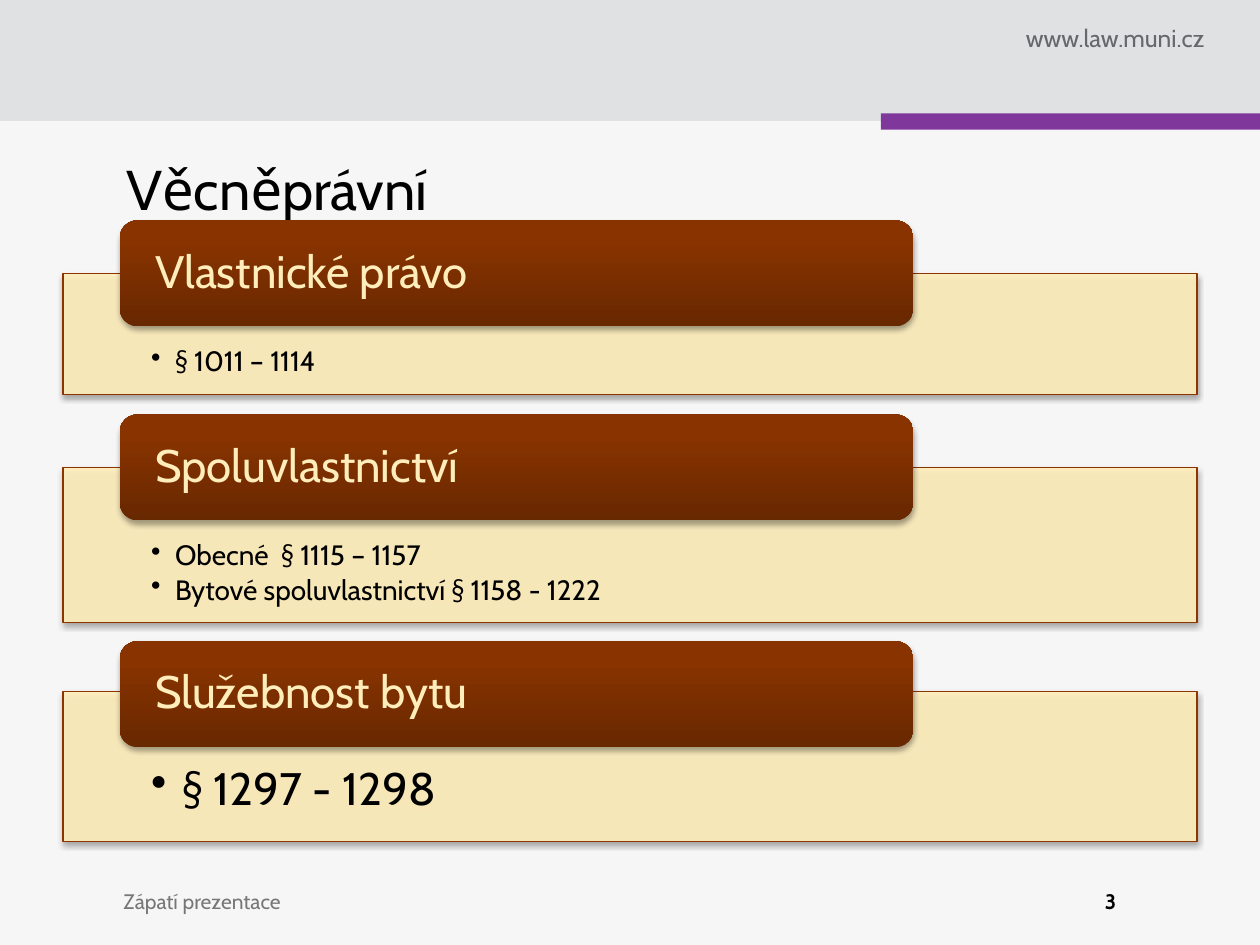
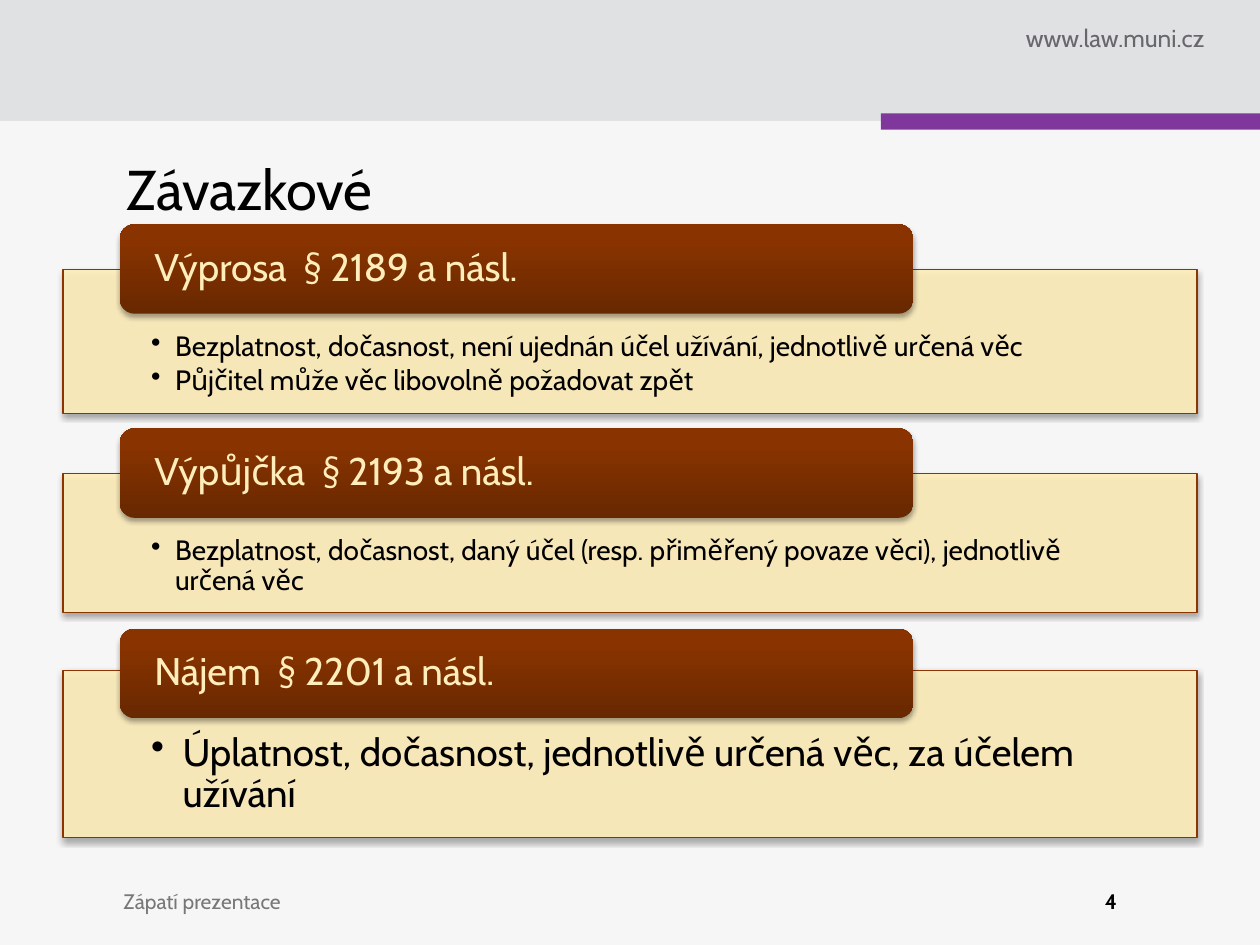
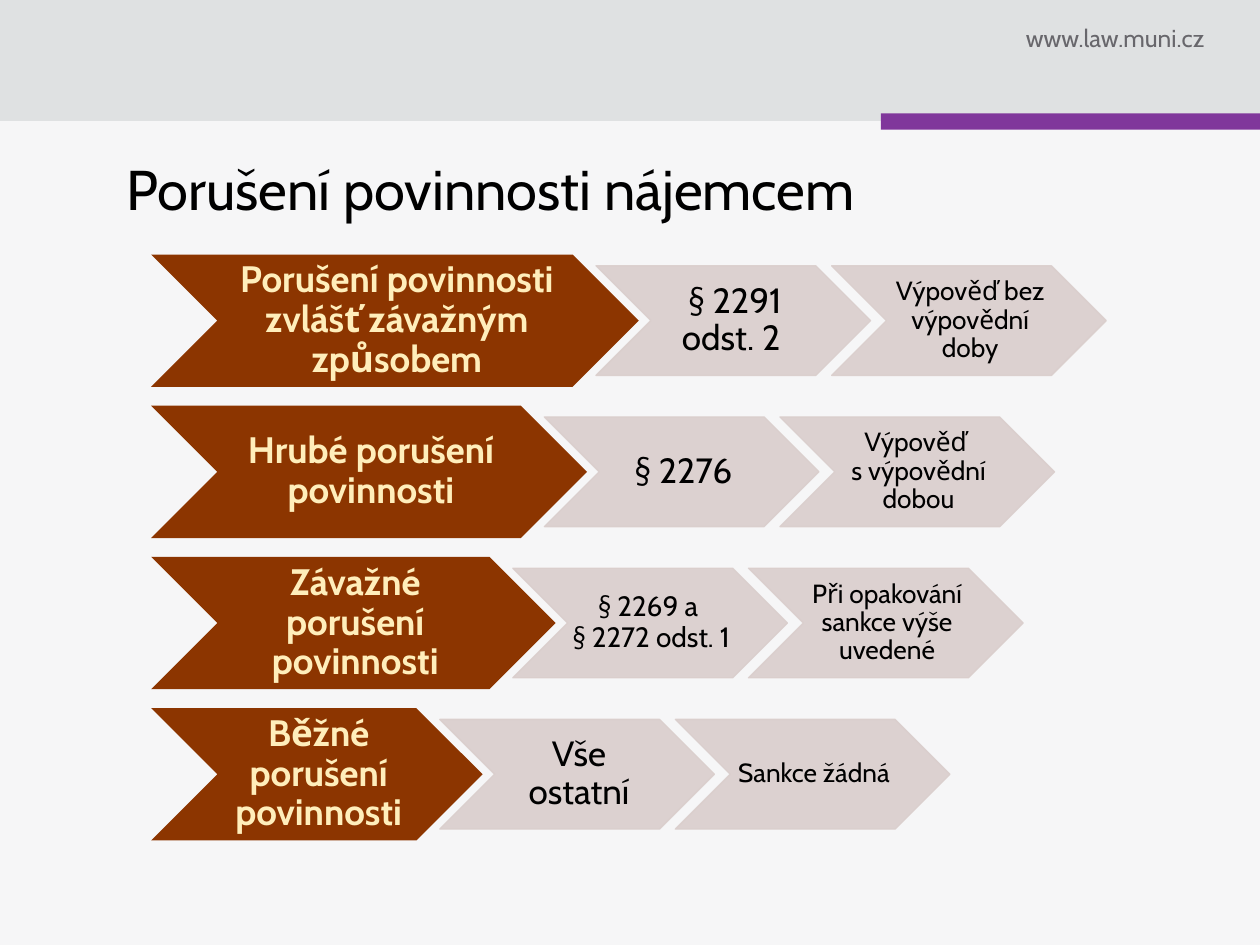
import copy
from dataclasses import dataclass
from typing import Any, NamedTuple, Optional

import lxml.etree
import pptx
import pptx.dml.color
import pptx.enum.shapes
import pptx.enum.text
import pptx.oxml.ns
import pptx.util

Inches = pptx.util.Inches
RGBColor = pptx.dml.color.RGBColor
Shapes = pptx.enum.shapes.MSO_SHAPE
Align = pptx.enum.text.PP_ALIGN
Anchor = pptx.enum.text.MSO_ANCHOR
qn = pptx.oxml.ns.qn

FONT = "Cabin"
BACKGROUND = RGBColor(0xF6, 0xF6, 0xF7)
BAND = RGBColor(0xDF, 0xE1, 0xE2)
PURPLE = RGBColor(0x80, 0x37, 0x9B)
ADDRESS_GREY = RGBColor(0x68, 0x67, 0x6C)
FOOTER_GREY = RGBColor(0x77, 0x77, 0x77)
BLACK = RGBColor(0x00, 0x00, 0x00)
CREAM = RGBColor(0xFF, 0xEE, 0xBB)
BROWN = RGBColor(0x8C, 0x35, 0x00)
PINK = RGBColor(0xDA, 0xCE, 0xCC)
HEADER_STOPS = [
    (0, RGBColor(0x68, 0x28, 0x00)),
    (0.8, RGBColor(0x88, 0x33, 0x00)),
    (1, RGBColor(0x88, 0x34, 0x00)),
]

PANEL_OPACITY = 90
TIGHT = 0.9

ROW_TOP, ROW_PITCH = 2.02, 1.2
LEAD_LEFT, LEAD_HEIGHT, LEAD_OVERLAP = 1.2, 1.05, 0.34
STEP_WIDTH, STEP_HEIGHT, STEP_PITCH = 2.18, 0.87, 1.87


class Box(NamedTuple):
    left: float
    top: float
    width: float
    height: float


class Insets(NamedTuple):
    left: float = 0
    top: float = 0
    right: float = 0
    bottom: float = 0


@dataclass
class TextStyle:
    size: float
    color: RGBColor = BLACK
    bold: bool = False
    align: Any = Align.LEFT
    anchor: Any = Anchor.TOP
    line_spacing: float = 1.0
    insets: Insets = Insets()
    bullet_indent: float = 0


@dataclass
class Section:
    header: str
    header_top: float
    body_top: float
    body_height: float
    bullets: list[str]
    size: int = 16
    bullet_indent: float = 0.19
    bottom_inset: float = 0.12


@dataclass
class SectionSlide:
    title: str
    number: str
    header_height: float
    header_size: int
    sections: list[Section]


class Step(NamedTuple):
    text: str
    size: int


@dataclass
class BreachRow:
    lead: str
    lead_width: float
    steps: list[Step]


SECTION_SLIDES = [
    SectionSlide("Věcněprávní", "3", 0.84, 26, [
        Section("Vlastnické právo", 1.75, 2.17, 0.96, ["§ 1011 – 1114"]),
        Section("Spoluvlastnictví", 3.29, 3.71, 1.23,
                ["Obecné  § 1115 – 1157", "Bytové spoluvlastnictví § 1158 - 1222"]),
        Section("Služebnost bytu", 5.09, 5.49, 1.19, ["§ 1297 - 1298"], 26, 0.25, 0.2),
    ]),
    SectionSlide("Závazkové", "4", 0.71, 22, [
        Section("Výprosa  § 2189 a násl.", 1.78, 2.14, 1.14,
                ["Bezplatnost, dočasnost, není ujednán účel užívání, jednotlivě určená věc",
                 "Půjčitel může věc libovolně požadovat zpět"]),
        Section("Výpůjčka  § 2193 a násl.", 3.4, 3.76, 1.1,
                ["Bezplatnost, dočasnost, daný účel (resp. přiměřený povaze věci), "
                 "jednotlivě určená věc"]),
        Section("Nájem  § 2201 a násl.", 4.99, 5.32, 1.33,
                ["Úplatnost, dočasnost, jednotlivě určená věc, za účelem užívání"],
                22, 0.25, 0.17),
    ]),
]

BREACH_TITLE = "Porušení povinnosti nájemcem"
BREACH_ROWS = [
    BreachRow("Porušení povinnosti zvlášť závažným způsobem", 3.87,
              [Step("§ 2291 odst. 2 ", 20), Step("Výpověď bez výpovědní doby", 15)]),
    BreachRow("Hrubé porušení povinnosti", 3.46,
              [Step("§ 2276", 20), Step("Výpověď \ns výpovědní dobou", 15)]),
    BreachRow("Závažné porušení povinnosti", 3.21,
              [Step("§ 2269 a \n§ 2272 odst. 1", 16),
               Step("Při opakování sankce výše uvedené", 15)]),
    BreachRow("Běžné porušení povinnosti", 2.63,
              [Step("Vše ostatní", 20), Step("Sankce žádná", 15)]),
]


def set_attributes(target: Any, values: dict[str, Any]) -> None:
    for name, value in values.items():
        setattr(target, name, value)


def inches(box: Box) -> list[int]:
    return [Inches(length) for length in box]


def add_bullet(paragraph: Any, indent: float) -> None:
    paragraph.level = 1
    properties = paragraph._p.get_or_add_pPr()
    properties.set("marL", str(Inches(indent)))
    properties.set("indent", str(-Inches(indent)))
    lxml.etree.SubElement(properties, qn("a:buChar")).set("char", "•")


def write(shape: Any, texts: list[str], style: TextStyle) -> None:
    """Fill the shape with one paragraph for each text."""
    frame = shape.text_frame
    set_attributes(frame, {
        "word_wrap": True,
        "auto_size": pptx.enum.text.MSO_AUTO_SIZE.NONE,
        "vertical_anchor": style.anchor,
        **{f"margin_{side}": Inches(length)
           for side, length in style.insets._asdict().items()},
    })
    for index, text in enumerate(texts):
        paragraph = frame.add_paragraph() if index else frame.paragraphs[0]
        paragraph.text = text
        set_attributes(paragraph, {"alignment": style.align,
                                   "line_spacing": style.line_spacing})
        if style.bullet_indent:
            add_bullet(paragraph, style.bullet_indent)
            paragraph.space_after = pptx.util.Pt(style.size * 0.15)
        for run in paragraph.runs:
            set_attributes(run.font, {"name": FONT, "size": pptx.util.Pt(style.size),
                                      "bold": style.bold})
            run.font.color.rgb = style.color


def add_label(slide: Any, box: Box, text: str, style: TextStyle) -> None:
    write(slide.shapes.add_textbox(*inches(box)), [text], style)


def add_panel(slide: Any, kind: Any, box: Box, fill: Optional[RGBColor] = None,
              line: Optional[RGBColor] = None, opacity: int = 100) -> Any:
    """Add a flat shape; opacity applies wherever the fill colour is used."""
    shape = slide.shapes.add_shape(kind, *inches(box))
    shape.shadow.inherit = False
    if fill is not None:
        shape.fill.solid()
        shape.fill.fore_color.rgb = fill
    if line is None:
        shape.line.fill.background()
    else:
        shape.line.color.rgb = line
        shape.line.width = pptx.util.Pt(0.75)
    if opacity < 100:
        for color in shape.element.spPr.iter(qn("a:srgbClr")):
            if color.get("val") == str(fill):
                lxml.etree.SubElement(color, qn("a:alpha")).set("val", str(opacity * 1000))
    return shape


def add_shadow(shape: Any) -> None:
    effects = shape.element.spPr.find(qn("a:effectLst"))
    shadow = lxml.etree.SubElement(effects, qn("a:outerShdw"))
    for name, value in {"blurRad": "40000", "dist": "23000", "dir": "5400000",
                        "rotWithShape": "0"}.items():
        shadow.set(name, value)
    color = lxml.etree.SubElement(shadow, qn("a:srgbClr"))
    color.set("val", str(BLACK))
    lxml.etree.SubElement(color, qn("a:alpha")).set("val", "35000")


def fill_header(shape: Any) -> None:
    """Apply the brown gradient, darkest at the bottom."""
    shape.fill.gradient()
    shape.fill.gradient_angle = 90
    stop_list = shape.element.spPr.find(".//" + qn("a:gsLst"))
    stop_list.append(copy.deepcopy(stop_list[-1]))
    for stop, (position, color) in zip(shape.fill.gradient_stops, HEADER_STOPS):
        stop.position = position
        stop.color.rgb = color


def add_titled_slide(presentation: Any, title: str) -> Any:
    slide = presentation.slides.add_slide(presentation.slide_layouts[5])
    add_panel(slide, Shapes.RECTANGLE, Box(0, -0.01, 10, 0.97), BAND)
    add_label(slide, Box(7.2, 0.18, 2.36, 0.23), "www.law.muni.cz",
              TextStyle(14, ADDRESS_GREY, align=Align.RIGHT))
    add_panel(slide, Shapes.RECTANGLE, Box(6.99, 0.9, 3.01, 0.13), PURPLE)
    placeholder = slide.shapes.title
    sides = ("left", "top", "width", "height")
    set_attributes(placeholder, dict(zip(sides, inches(Box(1, 1.23, 8.5, 0.55)))))
    write(placeholder, [title], TextStyle(32))
    return slide


def add_footer(slide: Any, number: str) -> None:
    add_label(slide, Box(0.98, 7.05, 7.48, 0.29), "Zápatí prezentace",
              TextStyle(12, FOOTER_GREY))
    add_label(slide, Box(8.77, 7.05, 0.73, 0.29), number, TextStyle(12, bold=True))


def add_section(slide: Any, section: Section, header_height: float,
                header_size: int) -> None:
    body = add_panel(slide, Shapes.RECTANGLE,
                     Box(0.5, section.body_top, 9, section.body_height),
                     CREAM, BROWN, PANEL_OPACITY)
    add_shadow(body)
    body_insets = Insets(0.7, header_height * 0.7, 0.7, section.bottom_inset)
    write(body, section.bullets,
          TextStyle(section.size, line_spacing=TIGHT, insets=body_insets,
                    bullet_indent=section.bullet_indent))

    header = add_panel(slide, Shapes.ROUNDED_RECTANGLE,
                       Box(0.95, section.header_top, 6.3, header_height))
    fill_header(header)
    add_shadow(header)
    write(header, [section.header],
          TextStyle(header_size, CREAM, anchor=Anchor.MIDDLE, line_spacing=TIGHT,
                    insets=Insets(left=0.24, right=0.24)))


def add_chevron(slide: Any, box: Box, text: str, size: int, lead: bool) -> None:
    if lead:
        shape = add_panel(slide, Shapes.CHEVRON, box, BROWN)
    else:
        shape = add_panel(slide, Shapes.CHEVRON, box, PINK, PINK, PANEL_OPACITY)
    write(shape, [text],
          TextStyle(size, CREAM if lead else BLACK, lead, Align.CENTER, Anchor.MIDDLE,
                    TIGHT, Insets(0.03 if size >= 20 else 0.02, 0.01, 0, 0.01)))


def add_breach_row(slide: Any, row: BreachRow, top: float) -> None:
    add_chevron(slide, Box(LEAD_LEFT, top, row.lead_width, LEAD_HEIGHT),
                row.lead, 21, True)
    first_left = LEAD_LEFT + row.lead_width - LEAD_OVERLAP
    step_top = top + (LEAD_HEIGHT - STEP_HEIGHT) / 2
    for index, step in enumerate(row.steps):
        box = Box(first_left + index * STEP_PITCH, step_top, STEP_WIDTH, STEP_HEIGHT)
        add_chevron(slide, box, step.text, step.size, False)


def main() -> None:
    presentation = pptx.Presentation()
    presentation.slide_width = Inches(10)
    presentation.slide_height = Inches(7.5)
    background = presentation.slide_master.background.fill
    background.solid()
    background.fore_color.rgb = BACKGROUND

    for content in SECTION_SLIDES:
        slide = add_titled_slide(presentation, content.title)
        add_footer(slide, content.number)
        for section in content.sections:
            add_section(slide, section, content.header_height, content.header_size)

    slide = add_titled_slide(presentation, BREACH_TITLE)
    for index, row in enumerate(BREACH_ROWS):
        add_breach_row(slide, row, ROW_TOP + index * ROW_PITCH)

    presentation.save("out.pptx")


if __name__ == "__main__":
    main()
